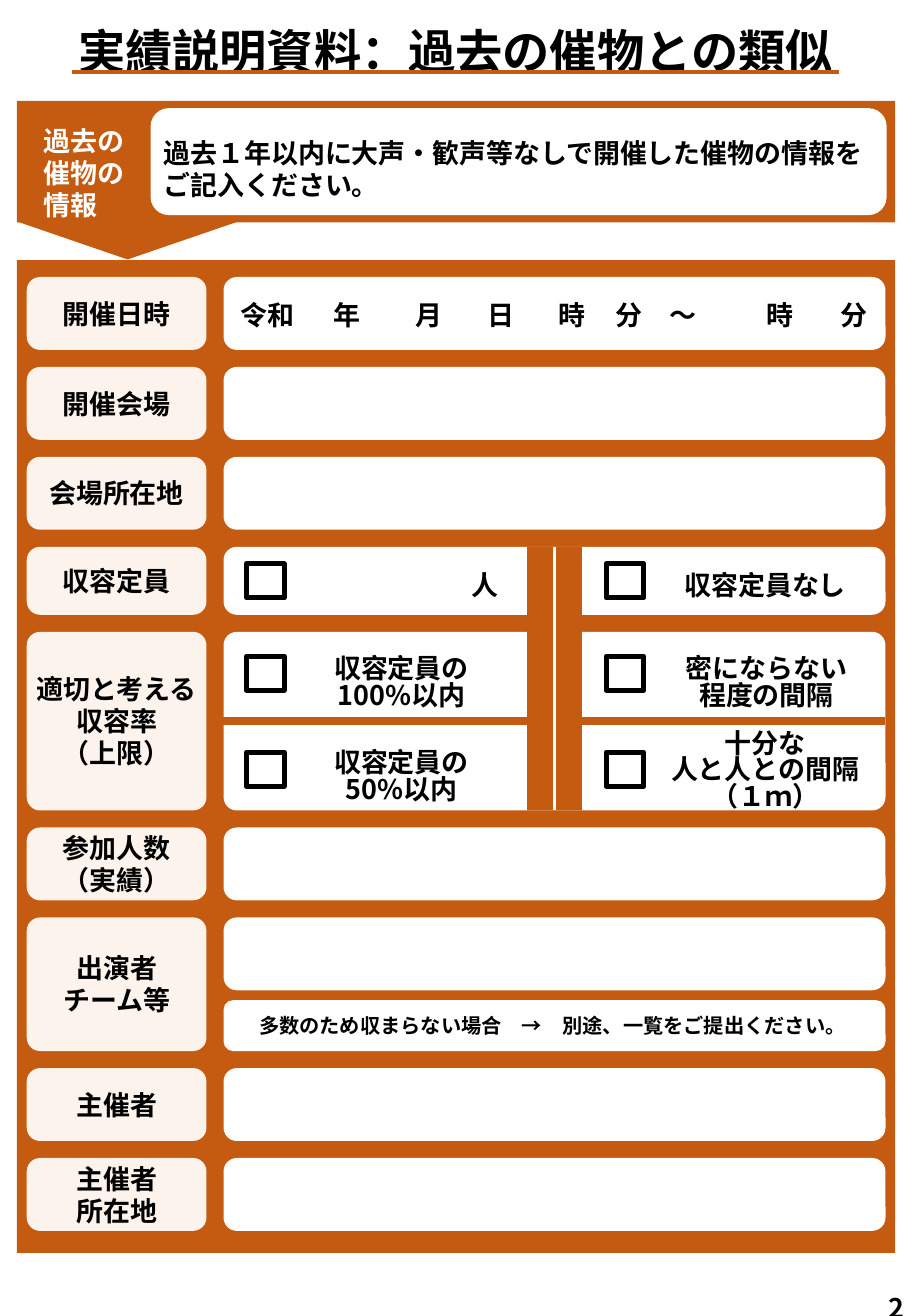
"""Build the one-page form describing a comparable past event."""
from dataclasses import dataclass

import lxml.etree
import pptx
import pptx.dml.color
import pptx.enum.shapes
import pptx.enum.text
import pptx.oxml.ns
import pptx.util

Inches = pptx.util.Inches
Pt = pptx.util.Pt
Preset = pptx.enum.shapes.MSO_SHAPE
Align = pptx.enum.text.PP_ALIGN


@dataclass(frozen=True)
class Theme:
    """Colours, font, type sizes and line widths."""
    orange: str = "C55A11"
    cream: str = "FDF3ED"
    white: str = "FFFFFF"
    black: str = "000000"
    font: str = "Noto Sans CJK JP"
    title: float = 28
    body: float = 16
    note: float = 12
    loose: float = 19
    tight: float = 16
    title_leading: float = 33
    rule: float = 2.25
    checkbox: float = 3
    separator: float = 4.5


@dataclass(frozen=True)
class Box:
    """A rectangle in inches."""
    left: float
    top: float
    width: float
    height: float


@dataclass(frozen=True)
class Row:
    """A form row: its label lines, height and answer field height."""
    label: tuple[str, ...]
    height: float = 0.6
    field: float = 0.6


@dataclass(frozen=True)
class Caption:
    """Lines of text set in a box."""
    lines: tuple[str, ...]
    box: Box
    size: float = Theme.body
    leading: float = Theme.tight
    color: str = Theme.black
    align: Align = Align.CENTER


FIRST_ROW, ROW_GAP = 2.28, 0.14
LABEL_LEFT, LABEL_WIDTH = 0.22, 1.48
FIELD_LEFT, FIELD_WIDTH = 1.84, 5.45
CORNER = 0.11

ROWS = (
    Row(("開催日時",)),
    Row(("開催会場",)),
    Row(("会場所在地",)),
    Row(("収容定員",), 0.56, 0.56),
    Row(("適切と考える", "収容率", "（上限）"), 1.47, 1.47),
    Row(("参加人数", "（実績）")),
    Row(("出演者", "チーム等"), 1.1),
    Row(("主催者",)),
    Row(("主催者", "所在地")),
)
DATE_PARTS = (
    ("令和", 1.76, 0.89), ("年", 2.41, 0.89), ("月", 3.09, 0.89),
    ("日", 3.68, 0.89), ("時", 4.26, 0.89), ("分　～", 4.74, 1.32),
    ("時", 5.98, 0.89), ("分", 6.37, 1.32),
)
HEADINGS = (
    Caption(("過去の", "催物の", "情報"), Box(0.26, 0.98, 1.14, 0.89),
            leading=Theme.loose, color=Theme.white, align=Align.LEFT),
    Caption(("過去１年以内に大声・歓声等なしで開催した催物の情報を", "ご記入ください。"),
            Box(1.25, 1.08, 6.14, 0.64), leading=Theme.loose, align=Align.LEFT),
    Caption(("実績説明資料：過去の催物との類似",), Box(0.48, 0.14, 6.54, 0.57),
            Theme.title, Theme.title_leading),
    Caption(("2",), Box(7.22, 10.58, 0.59, 0.37), leading=Theme.loose, align=Align.LEFT),
)
ANSWERS = (
    Caption(("人",), Box(3.55, 4.67, 0.89, 0.29)),
    Caption(("収容定員なし",), Box(5.49, 4.67, 1.62, 0.29)),
    Caption(("収容定員の", "100%以内"), Box(2.24, 5.36, 2.13, 0.5)),
    Caption(("密にならない程度の間隔",), Box(5.5, 5.36, 1.62, 0.5)),
    Caption(("収容定員の", "50%以内"), Box(2.24, 6.13, 2.13, 0.5)),
    Caption(("十分な", "人と人との間隔", "（１ｍ）"), Box(5.3, 5.97, 2, 0.68)),
    Caption(("多数のため収まらない場合　→　別途、一覧をご提出ください。",),
            Box(1.98, 8.27, 5.14, 0.33), Theme.note),
)


def rgb(color: str) -> pptx.dml.color.RGBColor:
    """Turn a hex string into a colour."""
    return pptx.dml.color.RGBColor.from_string(color)


def lengths(box: Box) -> tuple:
    """Give the box as slide lengths."""
    return tuple(Inches(v) for v in (box.left, box.top, box.width, box.height))


def write(frame, lines: tuple[str, ...], size: float, leading: float, color: str, align: Align) -> None:
    """Write bold lines, one paragraph each."""
    frame.word_wrap = True
    for index, line in enumerate(lines):
        paragraph = frame.add_paragraph() if index else frame.paragraphs[0]
        paragraph.alignment = align
        paragraph.line_spacing = Pt(leading)
        run = paragraph.add_run()
        run.text = line
        run.font.size = Pt(size)
        run.font.bold = True
        run.font.color.rgb = rgb(color)
        run.font.name = Theme.font
        east_asian = lxml.etree.SubElement(run.font._element, pptx.oxml.ns.qn("a:ea"))
        east_asian.set("typeface", Theme.font)


def add_caption(slide, caption: Caption) -> None:
    """Add a text box."""
    frame = slide.shapes.add_textbox(*lengths(caption.box)).text_frame
    write(frame, caption.lines, caption.size, caption.leading, caption.color, caption.align)
    frame.auto_size = pptx.enum.text.MSO_AUTO_SIZE.SHAPE_TO_FIT_TEXT


def add_panel(slide, box: Box, fill: str, preset: Preset = Preset.RECTANGLE):
    """Add a borderless filled shape."""
    panel = slide.shapes.add_shape(preset, *lengths(box))
    panel.shadow.inherit = False
    panel.fill.solid()
    panel.fill.fore_color.rgb = rgb(fill)
    panel.line.fill.background()
    return panel


def add_rounded(slide, box: Box, fill: str, corner: float = CORNER):
    """Add a panel with corners of a given radius."""
    panel = add_panel(slide, box, fill, Preset.ROUNDED_RECTANGLE)
    panel.adjustments[0] = corner / min(box.width, box.height)
    return panel


def add_checkbox(slide, left: float, top: float) -> None:
    """Add an empty tick box."""
    checkbox = add_panel(slide, Box(left, top, 0.31, 0.28), Theme.white)
    checkbox.fill.background()
    checkbox.line.color.rgb = rgb(Theme.black)
    checkbox.line.width = Pt(Theme.checkbox)


def add_rule(slide, start: tuple[float, float], end: tuple[float, float], color: str, width: float):
    """Add a straight line."""
    rule = slide.shapes.add_connector(
        pptx.enum.shapes.MSO_CONNECTOR.STRAIGHT, *(Inches(v) for v in start + end))
    rule.line.color.rgb = rgb(color)
    rule.line.width = Pt(width)
    lxml.etree.SubElement(rule._element.spPr, pptx.oxml.ns.qn("a:effectLst"))
    return rule


def add_rows(slide) -> list:
    """Stack the form rows and return their answer fields."""
    top, fields = FIRST_ROW, []
    for row in ROWS:
        label = add_rounded(slide, Box(LABEL_LEFT, top, LABEL_WIDTH, row.height), Theme.cream)
        frame = label.text_frame
        frame.margin_left = frame.margin_right = 0
        frame.vertical_anchor = pptx.enum.text.MSO_ANCHOR.MIDDLE
        write(frame, row.label, Theme.body, Theme.loose, Theme.black, Align.CENTER)
        fields.append(add_rounded(slide, Box(FIELD_LEFT, top, FIELD_WIDTH, row.field), Theme.white))
        top += row.height + ROW_GAP
    return fields


def main() -> None:
    """Draw the form and save it."""
    deck = pptx.Presentation()
    deck.slide_width, deck.slide_height = Inches(7.5), Inches(10.83)
    slide = deck.slides.add_slide(deck.slide_layouts[6])

    add_panel(slide, Box(0.74, 0.92, 0.62, 1.81), Theme.orange, Preset.PENTAGON).rotation = 90
    add_panel(slide, Box(0.14, 0.83, 7.23, 1), Theme.orange)
    add_rounded(slide, Box(1.24, 0.89, 6.06, 0.88), Theme.white, 0.15)
    add_panel(slide, Box(0.14, 2.14, 7.23, 8.17), Theme.orange)

    capacity_rate = add_rows(slide)[4]
    add_rounded(slide, Box(FIELD_LEFT, 8.23, FIELD_WIDTH, 0.42), Theme.white, 0.08)
    separator = add_rule(slide, (7.29, 5.94), (1.84, 5.94), Theme.orange, Theme.separator)
    separator.begin_connect(capacity_rate, 3)
    separator.end_connect(capacity_rate, 1)

    for top in (4.64, 5.4, 6.19):
        for left in (2.03, 4.99):
            add_checkbox(slide, left, top)
    dates = tuple(Caption((text,), Box(left, 2.45, width, 0.32)) for text, left, width in DATE_PARTS)
    for caption in HEADINGS + dates + ANSWERS:
        add_caption(slide, caption)

    add_rule(slide, (0.59, 0.59), (6.91, 0.59), Theme.orange, Theme.rule)
    gutter = add_panel(slide, Box(4.34, 4.5, 0.45, 2.17), Theme.orange)
    divider = add_rule(slide, (4.56, 4.5), (4.56, 6.67), Theme.white, Theme.rule)
    divider.begin_connect(gutter, 0)
    divider.end_connect(gutter, 2)
    deck.save("out.pptx")


if __name__ == "__main__":
    main()
